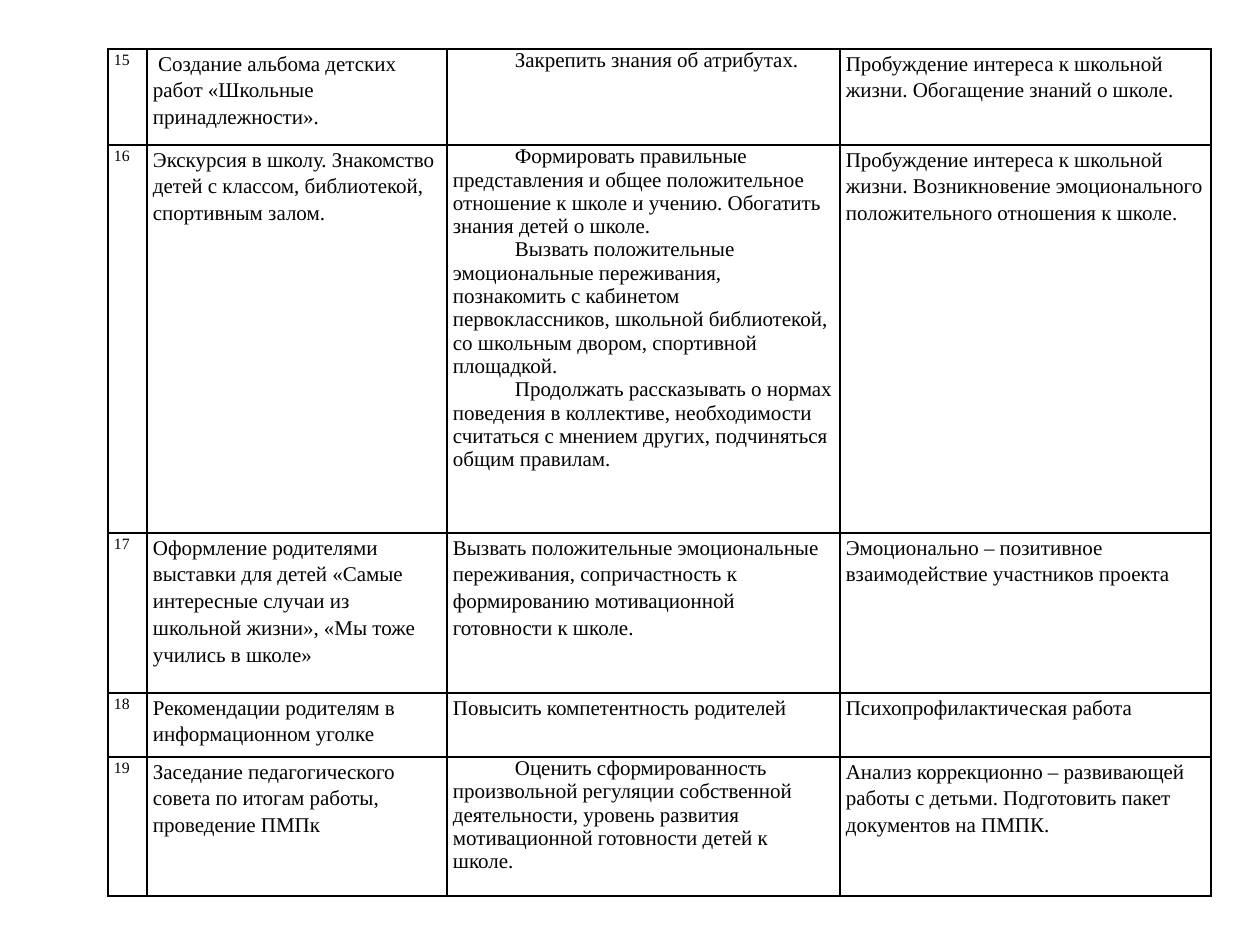
import lxml.etree
import pptx
import pptx.dml.color
import pptx.enum.text
import pptx.oxml.ns
import pptx.util

EMU_PER_PX = 914400 / 126
FONT = "Times New Roman"
COLORS = {"text": "000000", "border": "000000"}
LEFT, TOP = 108, 49
COLUMN_WIDTHS = [39, 300, 393, 371]
ROW_HEIGHTS = [96, 388, 160, 64, 139]
SIDE_MARGIN = 6
FIRST_LINE_INDENT = 62

# Number, activity, goals, expected result; goals in a list get indented first lines.
ROWS = [
    ("15",
     " Создание альбома детских работ «Школьные принадлежности».",
     ["Закрепить знания об атрибутах."],
     "Пробуждение интереса к школьной жизни. Обогащение знаний о школе."),
    ("16",
     "Экскурсия в школу. Знакомство детей с классом, библиотекой, спортивным залом.",
     ["Формировать правильные представления и общее положительное отношение к школе "
      "и учению. Обогатить знания детей о школе.",
      "Вызвать положительные эмоциональные переживания, познакомить с кабинетом "
      "первоклассников, школьной библиотекой, со школьным двором, спортивной площадкой.",
      "Продолжать рассказывать о нормах поведения в коллективе, необходимости считаться "
      "с мнением других, подчиняться общим правилам."],
     "Пробуждение интереса к школьной жизни. Возникновение эмоционального "
     "положительного отношения к школе."),
    ("17",
     "Оформление родителями выставки для детей «Самые интересные случаи из школьной "
     "жизни», «Мы тоже учились в школе»",
     "Вызвать положительные эмоциональные переживания, сопричастность к формированию "
     "мотивационной готовности к школе.",
     "Эмоционально – позитивное взаимодействие участников проекта"),
    ("18",
     "Рекомендации родителям в информационном уголке",
     "Повысить компетентность родителей",
     "Психопрофилактическая работа"),
    ("19",
     "Заседание педагогического совета по итогам работы, проведение ПМПк",
     ["Оценить сформированность произвольной регуляции собственной деятельности, "
      "уровень развития мотивационной готовности детей к школе."],
     "Анализ коррекционно – развивающей работы с детьми. Подготовить пакет документов "
     "на ПМПК."),
]


def px(n):
    return pptx.util.Emu(round(n * EMU_PER_PX))


def add_borders(cell):
    tc_pr = cell._tc.get_or_add_tcPr()
    qn = pptx.oxml.ns.qn
    for side in ("lnL", "lnR", "lnT", "lnB"):
        ln = lxml.etree.SubElement(tc_pr, qn(f"a:{side}"), w=str(pptx.util.Pt(1)))
        fill = lxml.etree.SubElement(ln, qn("a:solidFill"))
        lxml.etree.SubElement(fill, qn("a:srgbClr"), val=COLORS["border"])


def format_paragraph(p, size, indented):
    if indented:
        p._p.get_or_add_pPr().set("indent", str(px(FIRST_LINE_INDENT)))
    else:
        p.line_spacing = 1.15
    for r in p.runs:
        r.font.name = FONT
        r.font.size = pptx.util.Pt(size)
        r.font.color.rgb = pptx.dml.color.RGBColor.from_string(COLORS["text"])


def fill_cell(cell, content, size):
    """Write a string, or a list of paragraphs with indented first lines."""
    indented = isinstance(content, list)
    cell.margin_left = cell.margin_right = px(SIDE_MARGIN)
    cell.margin_top = cell.margin_bottom = 0
    add_borders(cell)
    cell.fill.background()
    tf = cell.text_frame
    tf.text = "\n".join(content) if indented else content
    for p in tf.paragraphs:
        format_paragraph(p, size, indented)


def add_plan_table(s):
    frame = s.shapes.add_table(len(ROWS), len(COLUMN_WIDTHS), px(LEFT), px(TOP),
                               px(sum(COLUMN_WIDTHS)), px(sum(ROW_HEIGHTS)))
    table = frame.table
    table.first_row = table.horz_banding = False
    for column, width in zip(table.columns, COLUMN_WIDTHS):
        column.width = px(width)
    for row, height, contents in zip(table.rows, ROW_HEIGHTS, ROWS):
        row.height = px(height)
        for i, (cell, content) in enumerate(zip(row.cells, contents)):
            fill_cell(cell, content, 9 if i == 0 else 12)
    return table


def main():
    prs = pptx.Presentation()
    prs.slide_width, prs.slide_height = px(1260), px(945)
    s = prs.slides.add_slide(prs.slide_layouts[6])
    table = add_plan_table(s)
    first_goal = table.cell(0, 2).text_frame.paragraphs[0]
    first_goal.alignment = pptx.enum.text.PP_ALIGN.JUSTIFY
    prs.save("out.pptx")


if __name__ == "__main__":
    main()
